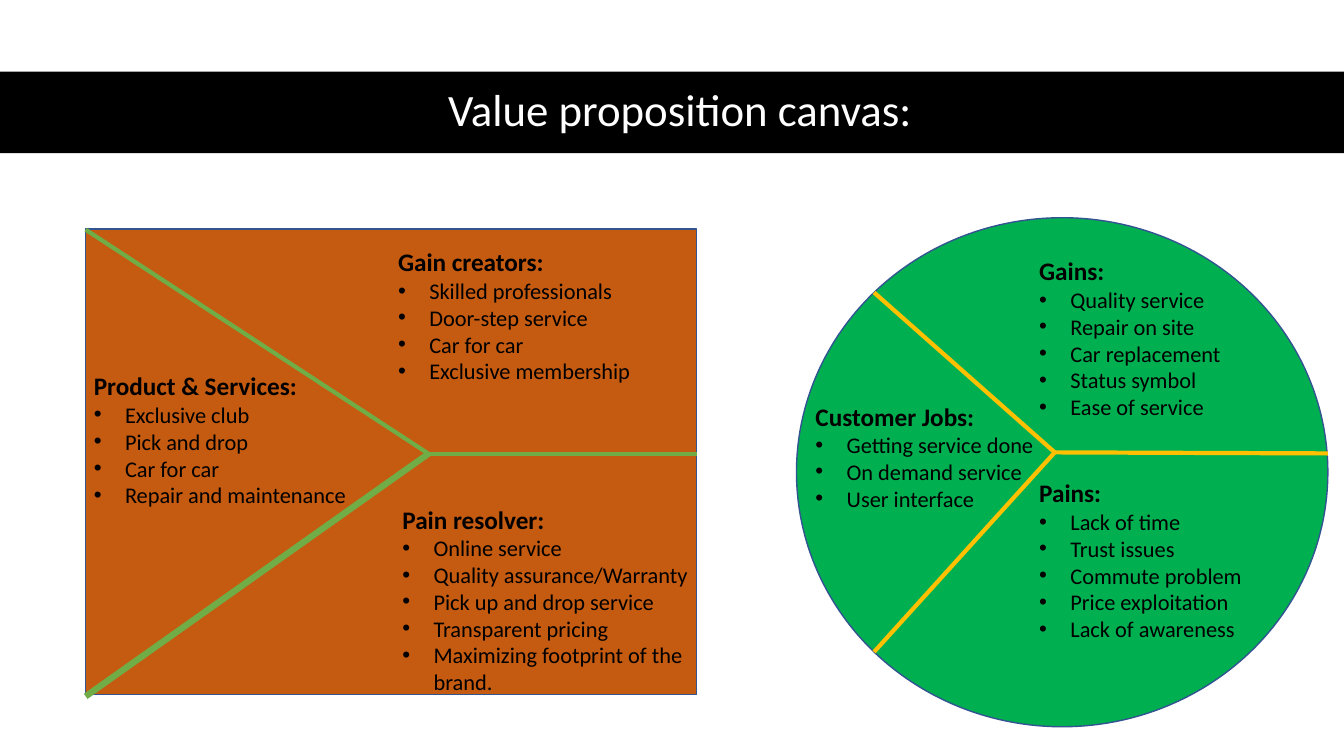
from dataclasses import dataclass

from lxml.etree import SubElement
from pptx import Presentation
from pptx.dml.color import RGBColor
from pptx.enum.shapes import MSO_CONNECTOR, MSO_SHAPE
from pptx.enum.text import MSO_ANCHOR, MSO_AUTO_SIZE, PP_ALIGN
from pptx.oxml.ns import qn
from pptx.util import Inches, Pt


@dataclass(frozen=True)
class Theme:
    """Colours, type sizes and line widths of the deck."""

    font: str = "Calibri"
    banner: str = "000000"
    banner_text: str = "FFFFFF"
    text: str = "000000"
    outline: str = "325491"
    value_fill: str = "C55A11"
    value_line: str = "70AD47"
    customer_fill: str = "00B050"
    customer_line: str = "FFC000"
    title_size: float = 32
    heading_size: float = 18
    item_size: float = 16
    thin: float = 3
    thick: float = 4.5
    indent: float = 0.31


@dataclass(frozen=True)
class Box:
    """A rectangle in inches."""

    left: float
    top: float
    width: float
    height: float

    def point(self, across, down):
        """Return the point at the given percentages of the box."""
        return (Inches(self.left + self.width * across / 100),
                Inches(self.top + self.height * down / 100))

    def inner(self, across, down, width, height):
        """Return an inner box given in percentages of this box."""
        return Box(self.left + self.width * across / 100, self.top + self.height * down / 100,
                   self.width * width / 100, self.height * height / 100)

    def frame(self):
        """Return the position and size as slide lengths."""
        return [Inches(length) for length in (self.left, self.top, self.width, self.height)]


THEME = Theme()
PAGE = Box(0, 0, 13.33, 7.5)
BANNER = Box(0, 0.71, PAGE.width, 0.81)
VALUE_MAP = Box(0.85, 2.27, 6.06, 4.62)
CUSTOMER_PROFILE = Box(7.9, 2.16, 5.27, 5.05)

VALUE_HUB = (56.1, 48.3)
VALUE_SPOKES = [((0, 100.4), THEME.thick), ((0, 0.2), THEME.thin), ((100, 48.3), THEME.thin)]
VALUE_LISTS = [
    ((49.5, 2.8, 50.5, 38.5), "Gain creators:",
     ["Skilled professionals", "Door-step service", "Car for car", "Exclusive membership"]),
    ((50.2, 58, 50.5, 50.2), "Pain resolver:",
     ["Online service", "Quality assurance/Warranty", "Pick up and drop service",
      "Transparent pricing", "Maximizing footprint of the brand."]),
    ((-0.3, 29.4, 51, 45.2), "Product & Services:",
     ["Exclusive club", "Pick and drop", "Car for car", "Repair and maintenance"]),
]

CUSTOMER_HUB = (48.6, 46.1)
CUSTOMER_SPOKES = [((14.6, 14.7), THEME.thin), ((14.6, 85.3), THEME.thin),
                   ((100, 46.3), THEME.thin)]
CUSTOMER_LISTS = [
    ((1.7, 35, 46.3, 24), "Customer Jobs:",
     ["Getting service done", "On demand service", "User interface"]),
    ((43.8, 50.1, 56.2, 40.6), "Pains:",
     ["Lack of time", "Trust issues", "Commute problem", "Price exploitation",
      "Lack of awareness"]),
    ((43.8, 6.5, 46.3, 34.7), "Gains:",
     ["Quality service", "Repair on site", "Car replacement", "Status symbol",
      "Ease of service"]),
]


def style_text(para, size, color, bold=False):
    """Format every run of a paragraph."""
    for span in para.runs:
        span.font.name = THEME.font
        span.font.size = Pt(size)
        span.font.bold = bold
        span.font.color.rgb = RGBColor.from_string(color)


def add_bullet(para):
    """Give a paragraph a hanging bullet."""
    properties = para._p.get_or_add_pPr()
    properties.set("marL", str(Inches(THEME.indent)))
    properties.set("indent", str(-Inches(THEME.indent)))
    SubElement(properties, qn("a:buFont")).set("typeface", "Arial")
    SubElement(properties, qn("a:buChar")).set("char", "•")


def add_panel(page, box, kind, fill, outline=None):
    """Draw a filled preset shape."""
    panel = page.shapes.add_shape(kind, *box.frame())
    panel.shadow.inherit = False
    panel.fill.solid()
    panel.fill.fore_color.rgb = RGBColor.from_string(fill)
    if outline:
        panel.line.color.rgb = RGBColor.from_string(outline)
        panel.line.width = Pt(1)
    else:
        panel.line.fill.background()


def add_spoke(page, start, end, color, width):
    """Draw a dividing line."""
    spoke = page.shapes.add_connector(MSO_CONNECTOR.STRAIGHT, *start, *end)
    spoke.line.color.rgb = RGBColor.from_string(color)
    spoke.line.width = Pt(width)
    SubElement(spoke._element.spPr, qn("a:effectLst"))


def add_list(page, box, heading, items):
    """Write a bold heading with its bulleted items."""
    frame = page.shapes.add_textbox(*box.frame()).text_frame
    frame.word_wrap = True
    frame.auto_size = MSO_AUTO_SIZE.SHAPE_TO_FIT_TEXT
    frame.text = "\n".join([heading, *items])
    style_text(frame.paragraphs[0], THEME.heading_size, THEME.text, bold=True)
    for para in frame.paragraphs[1:]:
        add_bullet(para)
        style_text(para, THEME.item_size, THEME.text)


def add_banner(page, box, title):
    """Draw the title band."""
    add_panel(page, box, MSO_SHAPE.RECTANGLE, THEME.banner)
    frame = page.shapes.add_textbox(*box.inner(4.6, -1, 92, 100).frame()).text_frame
    frame.word_wrap = True
    frame.vertical_anchor = MSO_ANCHOR.MIDDLE
    frame.text = title
    para = frame.paragraphs[0]
    para.alignment = PP_ALIGN.CENTER
    para.line_spacing = 0.9
    style_text(para, THEME.title_size, THEME.banner_text)


def add_canvas_half(page, box, kind, fill, line, hub, spokes, lists):
    """Draw a shape split by spokes, with one list in each sector."""
    add_panel(page, box, kind, fill, THEME.outline)
    for end, width in spokes:
        add_spoke(page, box.point(*hub), box.point(*end), line, width)
    for place, heading, items in lists:
        add_list(page, box.inner(*place), heading, items)


def main():
    """Build and save the deck."""
    deck = Presentation()
    deck.slide_width, deck.slide_height = PAGE.frame()[2:]
    page = deck.slides.add_slide(deck.slide_layouts[6])
    add_banner(page, BANNER, "Value proposition canvas:")
    add_canvas_half(page, CUSTOMER_PROFILE, MSO_SHAPE.OVAL, THEME.customer_fill,
                    THEME.customer_line, CUSTOMER_HUB, CUSTOMER_SPOKES, CUSTOMER_LISTS)
    add_canvas_half(page, VALUE_MAP, MSO_SHAPE.RECTANGLE, THEME.value_fill,
                    THEME.value_line, VALUE_HUB, VALUE_SPOKES, VALUE_LISTS)
    deck.save("out.pptx")


if __name__ == "__main__":
    main()
